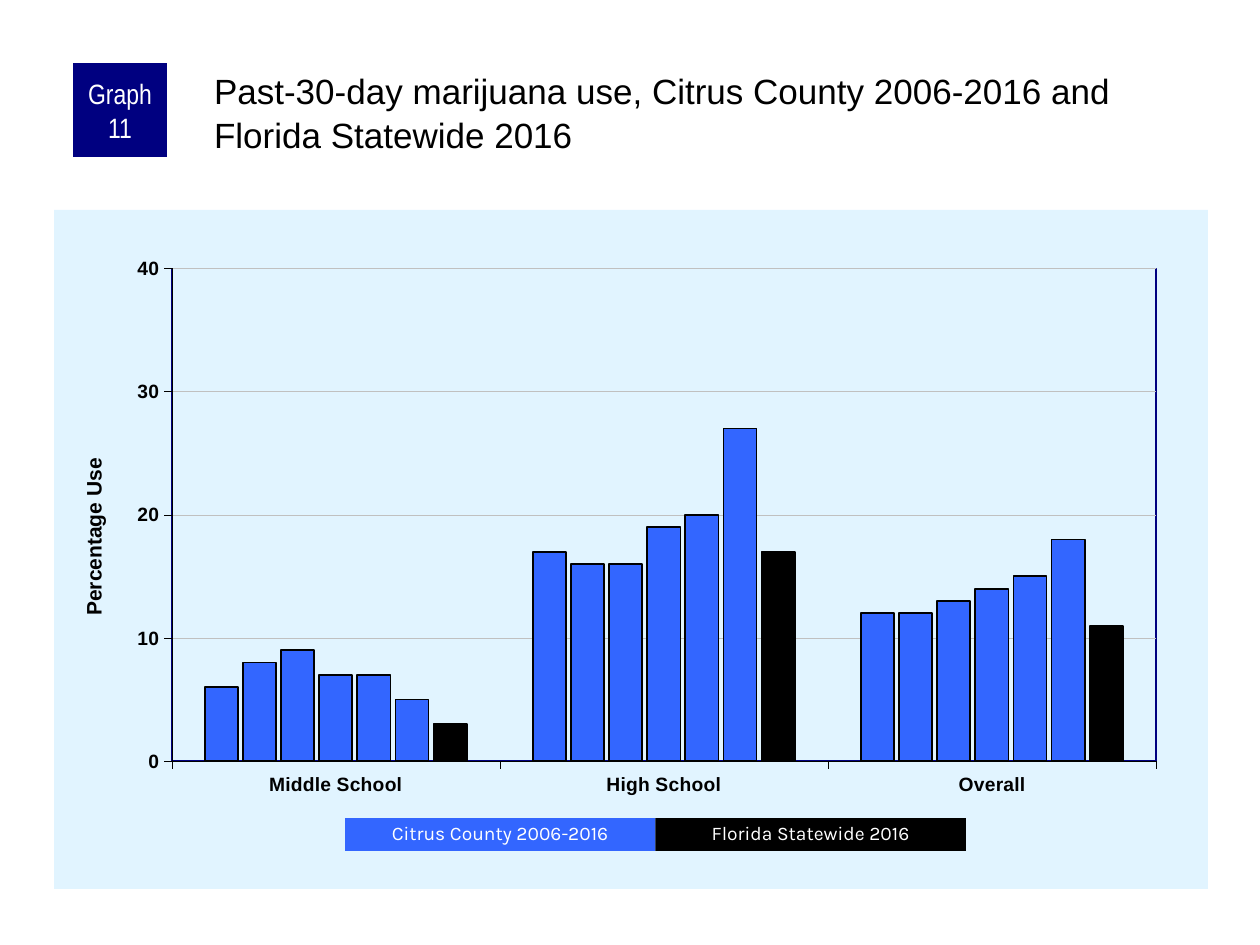
from pptx import Presentation
from pptx.chart.data import CategoryChartData as Data
from pptx.dml.color import RGBColor
from pptx.enum.chart import XL_CHART_TYPE as Kind, XL_TICK_MARK as Tick
from pptx.enum.shapes import MSO_SHAPE as Shape
from pptx.enum.text import MSO_ANCHOR as Anchor, MSO_AUTO_SIZE as Fit, PP_ALIGN as Align
from pptx.oxml import parse_xml
from pptx.oxml.ns import nsdecls, qn
from pptx.util import Emu, Pt

SCALE = 914400 / 126
NAVY, BLUE, BLACK, WHITE = "000080", "3366FF", "000000", "FFFFFF"
PALE, GRAY = "E1F4FF", "C0C0C0"


def px(n):
    return Emu(round(n * SCALE))


def rgb(code):
    return RGBColor.from_string(code)


def place(shape, box):
    shape.left, shape.top, shape.width, shape.height = map(px, box)


def style(font, size, color=BLACK, face="Arial", bold=False):
    font.size, font.name, font.bold = Pt(size), face, bold
    font.color.rgb = rgb(color)


def write(shape, text, size=11, color=BLACK, face="Arial", align=Align.CENTER,
          anchor=Anchor.MIDDLE, inset=(13, 6, 13, 6), space=1.0):
    frame = shape.text_frame
    frame.text = text
    frame.word_wrap, frame.auto_size = True, Fit.NONE
    frame.vertical_anchor = anchor
    (frame.margin_left, frame.margin_top,
     frame.margin_right, frame.margin_bottom) = map(px, inset)
    para = frame.paragraphs[0]
    para.alignment, para.line_spacing = align, space
    style(para.runs[0].font, size, color, face)


def block(slide, box, fill, text, **form):
    rect = slide.shapes.add_shape(Shape.RECTANGLE, *map(px, box))
    rect.shadow.inherit = False
    rect.fill.solid()
    rect.fill.fore_color.rgb = rgb(fill)
    rect.line.fill.background()
    write(rect, text, color=WHITE, **form)


def paint(fill, line):
    """Chart area format; None means no fill or no line."""
    def ink(code):
        return f'<a:solidFill><a:srgbClr val="{code}"/></a:solidFill>' if code else "<a:noFill/>"
    return parse_xml(f'<c:spPr {nsdecls("c", "a")}>{ink(fill)}'
                     f'<a:ln w="12700">{ink(line)}</a:ln></c:spPr>')


def layout(parent, index, inner=False, **parts):
    """Fix a chart part at fractions of the chart box."""
    old = parent.find(qn("c:layout"))
    if old is not None:
        parent.remove(old)
    target = '<c:layoutTarget val="inner"/>' if inner else ""
    modes = '<c:xMode val="edge"/><c:yMode val="edge"/>'
    vals = "".join(f'<c:{k} val="{v}"/>' for k, v in parts.items())
    parent.insert(index, parse_xml(
        f'<c:layout {nsdecls("c")}><c:manualLayout>{target}{modes}{vals}'
        '</c:manualLayout></c:layout>'))


def header(slide, box):
    x, y, w, h = box
    block(slide, (x, y, 94, 94), NAVY, "Graph 11", size=16,
          face="Arial Narrow", inset=(6, 0, 6, 0))
    title = slide.shapes.title
    place(title, (x + 137, y, w - 137, h))
    write(title, "Past-30-day marijuana use, Citrus County 2006-2016 and "
          "Florida Statewide 2016", size=20, align=Align.LEFT,
          anchor=Anchor.TOP, inset=(4, 4, 0, 0), space=1.05)


def graph(slide, box):
    data = Data()
    data.categories = ["Middle School", "High School", "Overall"]
    rows = [(6, 17, 12), (8, 16, 12), (9, 16, 13), (7, 19, 14),
            (7, 20, 15), (5, 27, 18), (3, 17, 11)]
    for n, row in enumerate(rows, 1):
        data.add_series(f"Series {n}", row)
    chart = slide.shapes.add_chart(Kind.COLUMN_CLUSTERED, *map(px, box), data).chart
    chart.has_legend = chart.has_title = False
    style(chart.font, 8)

    # Bars: county years in blue, the state in black
    plot = chart.plots[0]
    plot.gap_width, plot.overlap, plot.vary_by_categories = 200, -15, False
    for bar in plot.series:
        bar.format.fill.solid()
        bar.format.fill.fore_color.rgb = rgb(BLUE)
        bar.format.line.color.rgb = rgb(BLACK)
        bar.format.line.width = Pt(1)
    bar.format.fill.fore_color.rgb = rgb(BLACK)

    # Axes
    for axis in (chart.category_axis, chart.value_axis):
        axis.major_tick_mark, axis.minor_tick_mark = Tick.OUTSIDE, Tick.NONE
        style(axis.tick_labels.font, 11, bold=True)
        axis.format.line.color.rgb = rgb(BLACK)
        axis.format.line.width = Pt(0.25)
    axis.minimum_scale, axis.maximum_scale, axis.major_unit = 0, 40, 10
    grid = axis.major_gridlines.format.line
    grid.color.rgb, grid.width = rgb(GRAY), Pt(0.25)
    name = axis.axis_title
    name.text_frame.text = "Percentage Use"
    style(name.text_frame.paragraphs[0].runs[0].font, 12, bold=True)
    layout(name._element, 1, x=0.02, y=0.36)

    # Panel and plot frame
    root = chart._chartSpace
    root.find(qn("c:chart")).addnext(paint(PALE, None))
    area = root.find(".//" + qn("c:plotArea"))
    layout(area, 0, inner=True, x=0.102, y=0.086, w=0.853, h=0.726)
    area.append(paint(None, NAVY))


def legend(slide, box):
    x, y, w, h = box
    half = w / 2
    keys = [(BLUE, "Citrus County 2006-2016"), (BLACK, "Florida Statewide 2016")]
    for n, (fill, text) in enumerate(keys):
        block(slide, (x + n * half, y, half, h), fill, text,
              face="Karla", space=0.9)


def main():
    deck = Presentation()
    deck.slide_width, deck.slide_height = px(1260), px(945)
    slide = deck.slides.add_slide(deck.slide_layouts[5])
    graph(slide, (54, 210, 1154, 679))
    header(slide, (73, 63, 1135, 105))
    legend(slide, (345, 818, 621, 33))
    deck.save("out.pptx")


if __name__ == "__main__":
    main()
